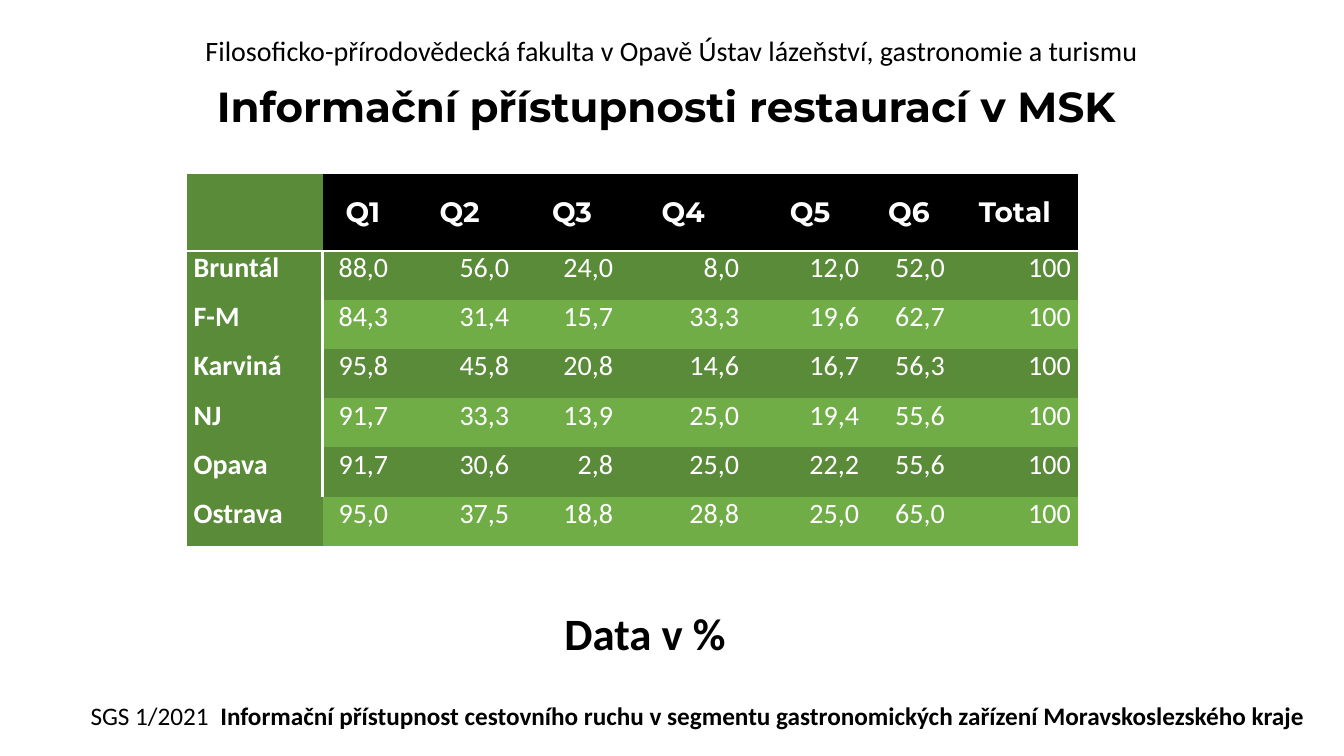
"""Build the slide on the information accessibility of restaurants."""
from dataclasses import dataclass
from typing import Any

from lxml import etree
from pptx import Presentation
from pptx import util as u
from pptx.dml.color import RGBColor
from pptx.enum import text
from pptx.oxml.ns import qn


@dataclass(frozen=True)
class Theme:
    black: str = "000000"
    white: str = "FFFFFF"
    dark: str = "5A8B39"
    light: str = "70AD47"
    head_font: str = "Montserrat"
    body_font: str = "Calibri"
    title: float = 30
    data: float = 32
    body: float = 20
    footer: float = 18
    rule: float = 2


@dataclass(frozen=True)
class Box:
    x: float
    y: float
    w: float
    h: float


@dataclass(frozen=True)
class Run:
    words: str
    size: float
    bold: bool = False
    font: str = Theme.body_font
    color: str = Theme.black


@dataclass(frozen=True)
class Label:
    box: Box
    runs: tuple[Run, ...]
    wrap: bool = True


T = Theme()
WIDTH, HEIGHT = u.Inches(13.33), u.Inches(7.5)
NO_STYLE = "{2D5ABB26-0587-4C30-8999-92F81FD0307C}"

TITLE_BOX = Box(6.9, 7.47, 86.25, 14)
TABLE_BOX = Box(13.88, 23.07, 66.3, 49.13)
COLUMN_SHARES = (10.13, 5.4, 9, 7.73, 9.38, 8.93, 6.38, 9.38)
HEAD_ROW, DATA_ROW = 10.13, 6.5

LABELS = (
    Label(Box(6, 92, 92.5, 5.33), (
        Run("SGS 1/2021  ", T.footer),
        Run("Informační přístupnost cestovního ruchu v segmentu gastronomických "
            "zařízení Moravskoslezského kraje", T.footer, True)), wrap=False),
    Label(Box(14.55, 3.73, 72.25, 5.87), (
        Run("Filosoficko-přírodovědecká fakulta v Opavě Ústav lázeňství, "
            "gastronomie a turismu", T.body),)),
    Label(Box(41.25, 79.47, 18.68, 8.53), (Run("Data v %", T.data, True),)),
)

ROWS = (
    ("", " Q1", " Q2", " Q3", "Q4", " Q5", "Q6", "Total"),
    ("Bruntál", "88,0", "56,0", "24,0", "8,0", "12,0", "52,0", "100"),
    ("F-M", "84,3", "31,4", "15,7", "33,3", "19,6", "62,7", "100"),
    ("Karviná", "95,8", "45,8", "20,8", "14,6", "16,7", "56,3", "100"),
    ("NJ", "91,7", "33,3", "13,9", "25,0", "19,4", "55,6", "100"),
    ("Opava", "91,7", "30,6", "2,8", "25,0", "22,2", "55,6", "100"),
    ("Ostrava", "95,0", "37,5", "18,8", "28,8", "25,0", "65,0", "100"),
)


def across(share: float) -> int:
    return u.Emu(round(WIDTH * share / 100))


def down(share: float) -> int:
    return u.Emu(round(HEIGHT * share / 100))


def place(box: Box) -> dict[str, int]:
    return {"left": across(box.x), "top": down(box.y),
            "width": across(box.w), "height": down(box.h)}


def apply(target: Any, values: dict[str, Any]) -> None:
    for name, value in values.items():
        setattr(target, name, value)


def add_run(p: Any, run: Run) -> None:
    r = p.add_run()
    r.text = run.words
    apply(r.font, {"name": run.font, "size": u.Pt(run.size), "bold": run.bold})
    r.font.color.rgb = RGBColor.from_string(run.color)


def add_title(s: Any) -> None:
    sp = s.shapes.title
    apply(sp, place(TITLE_BOX))
    tf = sp.text_frame
    apply(tf, {"vertical_anchor": text.MSO_ANCHOR.MIDDLE, "word_wrap": True,
               "auto_size": text.MSO_AUTO_SIZE.NONE})
    p = tf.paragraphs[0]
    apply(p, {"alignment": text.PP_ALIGN.CENTER, "line_spacing": 0.9})
    add_run(p, Run("Informační přístupnosti restaurací v MSK ", T.title, True, T.head_font))


def add_label(s: Any, label: Label) -> None:
    tf = s.shapes.add_textbox(**place(label.box)).text_frame
    apply(tf, {"word_wrap": label.wrap,
               "auto_size": text.MSO_AUTO_SIZE.SHAPE_TO_FIT_TEXT})
    for run in label.runs:
        add_run(tf.paragraphs[0], run)


def add_border(cell: Any, side: str) -> None:
    ln = etree.Element(qn(f"a:{side}"), w=str(u.Pt(T.rule)))
    fill = etree.SubElement(ln, qn("a:solidFill"))
    etree.SubElement(fill, qn("a:srgbClr"), val=T.white)
    cell._tc.get_or_add_tcPr().insert(0, ln)


def fill_cell(cell: Any, words: str, row: int, col: int) -> None:
    head, name = row == 0, col == 0
    color = T.dark if name else T.black if head else T.dark if row % 2 else T.light
    align = (text.PP_ALIGN.CENTER if head else
             text.PP_ALIGN.LEFT if name else text.PP_ALIGN.RIGHT)
    apply(cell, {
        "margin_left": u.Inches(0.07), "margin_right": u.Inches(0.07),
        "margin_top": 0, "margin_bottom": 0,
        "vertical_anchor": text.MSO_ANCHOR.MIDDLE if head else text.MSO_ANCHOR.TOP})
    cell.fill.solid()
    cell.fill.fore_color.rgb = RGBColor.from_string(color)
    if head:
        add_border(cell, "lnB")
    elif name and row < len(ROWS) - 1:
        add_border(cell, "lnR")
    if words:
        p = cell.text_frame.paragraphs[0]
        p.alignment = align
        font = T.head_font if head else T.body_font
        add_run(p, Run(words, T.body, head or name, font, T.white))


def add_results(s: Any) -> None:
    frame = s.shapes.add_table(len(ROWS), len(COLUMN_SHARES), **place(TABLE_BOX))
    table = frame.table
    table._tbl.tblPr.find(qn("a:tableStyleId")).text = NO_STYLE
    for column, share in zip(table.columns, COLUMN_SHARES):
        column.width = across(share)
    for i, values in enumerate(ROWS):
        table.rows[i].height = down(DATA_ROW if i else HEAD_ROW)
        for j, words in enumerate(values):
            fill_cell(table.cell(i, j), words, i, j)


def main() -> None:
    prs = Presentation()
    apply(prs, {"slide_width": WIDTH, "slide_height": HEIGHT})
    s = prs.slides.add_slide(prs.slide_layouts[5])
    add_title(s)
    for label in LABELS:
        add_label(s, label)
    add_results(s)
    prs.save("out.pptx")


if __name__ == "__main__":
    main()
